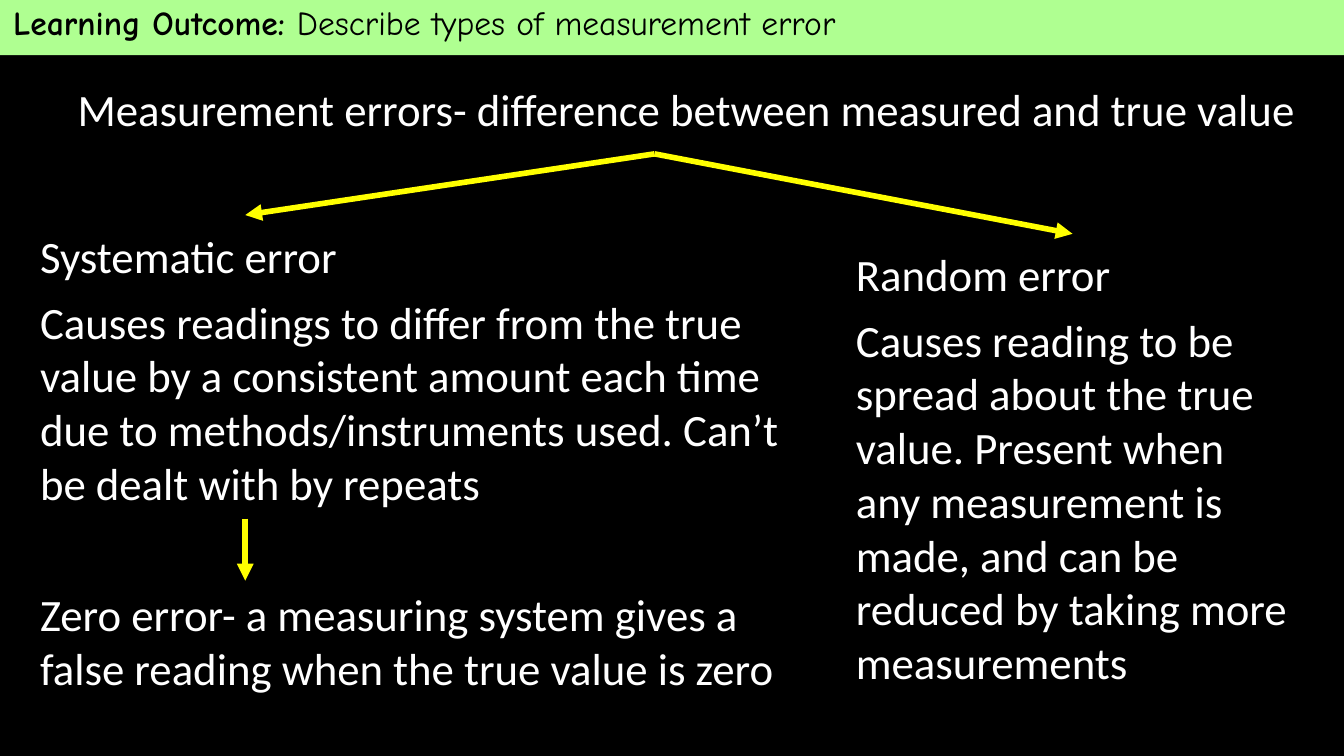
"""Builds a slide that sorts measurement errors into systematic and random."""
from dataclasses import dataclass

from lxml.etree import SubElement
from pptx import Presentation
from pptx.dml.color import RGBColor as Rgb
from pptx.enum.shapes import MSO_CONNECTOR as Connector, MSO_SHAPE as Shape
from pptx.enum.text import MSO_ANCHOR as Anchor, PP_ALIGN as Align
from pptx.oxml.ns import qn
from pptx.slide import Slide
from pptx.util import Emu, Pt

EMU_PER_PX = 4572


@dataclass(frozen=True)
class Theme:
    background: Rgb = Rgb(0, 0, 0)
    banner: Rgb = Rgb(0xAF, 0xFF, 0x91)
    banner_text: Rgb = Rgb(0, 0, 0)
    text: Rgb = Rgb(0xFF, 0xFF, 0xFF)
    arrow: Rgb = Rgb(0xFF, 0xFF, 0)
    body_font: str = "Calibri"
    banner_font: str = "Comic Neue"
    body_size: float = 24
    banner_size: float = 18
    arrow_width: float = 3
    gap: float = 6.4
    section_gap: float = 41.5


@dataclass(frozen=True)
class Note:
    left: int
    top: int
    width: int
    height: int
    lines: tuple[str, ...]
    section_start: int | None = None


@dataclass(frozen=True)
class Arrow:
    start: tuple[int, int]
    end: tuple[int, int]


THEME = Theme()
SLIDE_SIZE = (2000, 1125)
BANNER_HEIGHT = 82
INSET = 20
FORK = (974, 229)
SYSTEMATIC_X = 365

NOTES = (
    Note(40, 320, 1174, 184, (
        "Systematic error",
        "Causes readings to differ from the true value by a consistent amount "
        "each time due to methods/instruments used. Can’t be dealt with by repeats",
        "Zero error- a measuring system gives a false reading when the true value is zero",
    ), section_start=2),
    Note(1254, 347, 686, 184, (
        "Random error",
        "Causes reading to be spread about the true value. Present when any "
        "measurement is made, and can be reduced by taking more measurements",
    )),
    Note(96, 102, 1934, 126, (
        "Measurement errors- difference between measured and true value",
    )),
)

ARROWS = (
    Arrow(FORK, (SYSTEMATIC_X, 320)),
    Arrow(FORK, (1596, 348)),
    Arrow((SYSTEMATIC_X, 772), (SYSTEMATIC_X, 864)),
)


def px(*lengths: int) -> list[Emu]:
    """Turn px lengths into EMU."""
    return [Emu(length * EMU_PER_PX) for length in lengths]


def draw_banner(page: Slide, label: str, outcome: str) -> None:
    """Draw the top band with a bold label and a plain outcome."""
    box = page.shapes.add_shape(Shape.RECTANGLE, *px(0, 0, SLIDE_SIZE[0], BANNER_HEIGHT))
    box.shadow.inherit = False
    box.fill.solid()
    box.fill.fore_color.rgb = THEME.banner
    box.line.fill.background()
    frame = box.text_frame
    frame.word_wrap = True
    frame.vertical_anchor = Anchor.TOP
    para = frame.paragraphs[0]
    para.alignment = Align.LEFT
    para.line_spacing = 0.9
    for text, bold in ((label, True), (outcome, False)):
        span = para.add_run()
        span.text = text
        span.font.bold = bold
        span.font.name = THEME.banner_font
        span.font.size = Pt(THEME.banner_size)
        span.font.color.rgb = THEME.banner_text


def draw_note(page: Slide, note: Note) -> None:
    """Draw a text box with one paragraph per line of the note."""
    box = page.shapes.add_textbox(*px(note.left, note.top, note.width, note.height))
    frame = box.text_frame
    frame.word_wrap = True
    frame.margin_left, frame.margin_top, frame.margin_right, frame.margin_bottom = px(*[INSET] * 4)
    frame.text = "\n".join(note.lines)
    for index, para in enumerate(frame.paragraphs):
        para.space_before = Pt(THEME.section_gap if index == note.section_start else THEME.gap)
        for span in para.runs:
            span.font.name = THEME.body_font
            span.font.size = Pt(THEME.body_size)
            span.font.color.rgb = THEME.text


def draw_arrow(page: Slide, arrow: Arrow) -> None:
    """Draw a straight line with a triangular head at its end."""
    connector = page.shapes.add_connector(Connector.STRAIGHT, *px(*arrow.start, *arrow.end))
    connector.line.color.rgb = THEME.arrow
    connector.line.width = Pt(THEME.arrow_width)
    properties = connector._element.spPr
    SubElement(properties.find(qn("a:ln")), qn("a:tailEnd"), type="triangle")
    SubElement(properties, qn("a:effectLst"))


def main() -> None:
    """Build and save the deck."""
    deck = Presentation()
    deck.slide_width, deck.slide_height = px(*SLIDE_SIZE)
    page = deck.slides.add_slide(deck.slide_layouts[6])
    page.background.fill.solid()
    page.background.fill.fore_color.rgb = THEME.background
    draw_banner(page, "Learning Outcome: ", "Describe types of measurement error")
    for note in NOTES:
        draw_note(page, note)
    for arrow in ARROWS:
        draw_arrow(page, arrow)
    deck.save("out.pptx")


if __name__ == "__main__":
    main()
